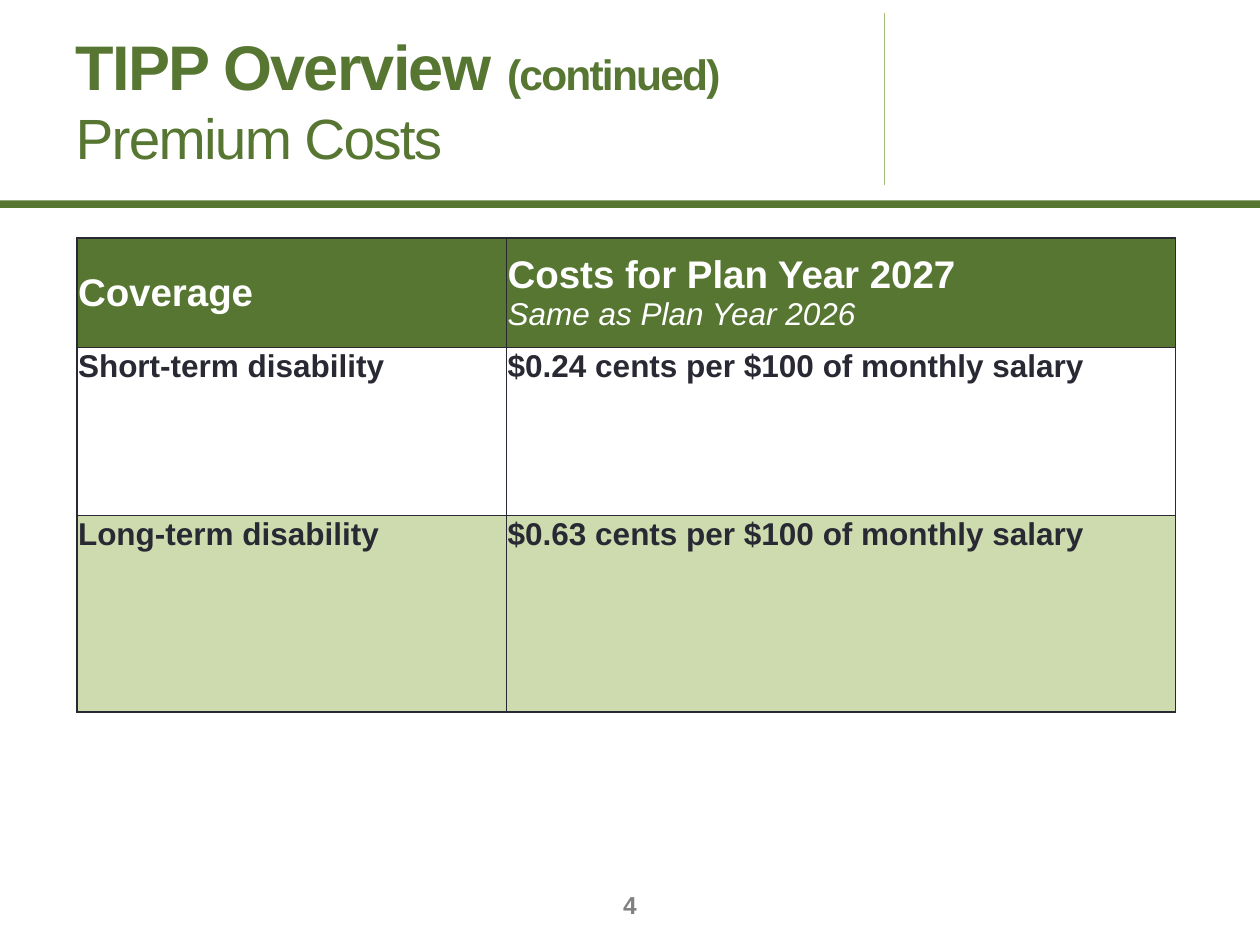
"""Build the TIPP premium costs slide."""
from lxml import etree
from pptx import Presentation
from pptx import util as u
from pptx.dml.color import RGBColor
from pptx.enum import shapes, text
from pptx.oxml import ns

GREEN = RGBColor(0x56, 0x76, 0x32)
SAGE = RGBColor(0xA3, 0xBD, 0x7B)
PALE = RGBColor(0xCE, 0xDB, 0xAF)
INK = RGBColor(0x29, 0x29, 0x34)
GRAY = RGBColor(0x80, 0x80, 0x80)
WHITE = RGBColor(0xFF, 0xFF, 0xFF)

WIDTH, HEIGHT = 10, 7.5
TITLE = [[("TIPP Overview ", 36, True), ("(continued)", 24.3, True)],
         [("Premium Costs", 32.4, False)]]
HEADER = [["Coverage"], ["Costs for Plan Year 2027", "Same as Plan Year 2026"]]
BODY = [[["Short-term disability"], ["$0.24 cents per $100 of monthly salary"]],
        [["Long-term disability"], ["$0.63 cents per $100 of monthly salary"]]]
ROW_FILLS = [GREEN, WHITE, PALE]
COLUMNS = [3.41, 5.31]
ROWS = [0.87, 1.33, 1.56]
PAGE_NUMBER = "4"


def write(para, words, size=18, color=INK, bold=True, italic=False, spacing=None):
    """Add one formatted run to a paragraph."""
    span = para.add_run()
    span.text = words
    font = span.font
    font.name, font.size = "Arial", u.Pt(size)
    font.bold, font.italic = bold, italic
    font.color.rgb = color
    if spacing is not None:
        span._r.get_or_add_rPr().set("spc", str(spacing * 100))


def paragraphs(frame, count):
    """Return the requested number of paragraphs of a text frame."""
    return [frame.paragraphs[0]] + [frame.add_paragraph() for _ in range(count - 1)]


def outline_cell(cell):
    """Draw a thin dark border on all sides of a cell."""
    props = cell._tc.get_or_add_tcPr()
    for index, side in enumerate(("lnL", "lnR", "lnT", "lnB")):
        line = etree.Element(ns.qn(f"a:{side}"), w=str(u.Pt(1)))
        fill = etree.SubElement(line, ns.qn("a:solidFill"))
        etree.SubElement(fill, ns.qn("a:srgbClr"), val=str(INK))
        props.insert(index, line)


def add_rules(page):
    """Draw the header band and the vertical divider."""
    band = page.shapes.add_shape(shapes.MSO_SHAPE.RECTANGLE, 0, u.Inches(1.59),
                                 u.Inches(WIDTH), u.Inches(0.06))
    band.shadow.inherit = False
    band.fill.solid()
    band.fill.fore_color.rgb = GREEN
    band.line.fill.background()
    divider = page.shapes.add_connector(
        shapes.MSO_CONNECTOR.STRAIGHT,
        *(u.Inches(place) for place in (7.02, 0.1, 7.02, 1.47)))
    divider.line.color.rgb = SAGE
    divider.line.width = u.Pt(1)
    etree.SubElement(divider._element.spPr, ns.qn("a:effectLst"))


def add_title(page):
    """Place and fill the title placeholder."""
    box = page.shapes.title
    box.left, box.top, box.width, box.height = (
        u.Inches(length) for length in (0.5, 0.25, 6.27, 1.08))
    frame = box.text_frame
    frame.auto_size = text.MSO_AUTO_SIZE.NONE
    frame.vertical_anchor = text.MSO_ANCHOR.MIDDLE
    for para, spans in zip(paragraphs(frame, len(TITLE)), TITLE):
        para.alignment = text.PP_ALIGN.LEFT
        for words, size, bold in spans:
            write(para, words, size=size, color=GREEN, bold=bold, spacing=-1)


def add_costs(page):
    """Add the premium cost table."""
    table = page.shapes.add_table(
        len(ROWS), len(COLUMNS), u.Inches(0.61), u.Inches(1.89),
        u.Inches(sum(COLUMNS)), u.Inches(sum(ROWS))).table
    for column, width in zip(table.columns, COLUMNS):
        column.width = u.Inches(width)
    for r, (height, entries, fill) in enumerate(zip(ROWS, [HEADER] + BODY, ROW_FILLS)):
        table.rows[r].height = u.Inches(height)
        header = r == 0
        for c, lines in enumerate(entries):
            cell = table.cell(r, c)
            cell.margin_left = cell.margin_right = u.Inches(0.01)
            cell.margin_top = cell.margin_bottom = u.Inches(0.01)
            cell.vertical_anchor = (text.MSO_ANCHOR.MIDDLE if header
                                    else text.MSO_ANCHOR.TOP)
            cell.fill.solid()
            cell.fill.fore_color.rgb = fill
            outline_cell(cell)
            for i, para in enumerate(paragraphs(cell.text_frame, len(lines))):
                write(para, lines[i], size=22 if header and i == 0 else 18,
                      color=WHITE if header else INK, bold=i == 0, italic=i > 0)


def add_page_number(page):
    """Center the page number at the foot."""
    width = 1.17
    box = page.shapes.add_textbox(u.Inches((WIDTH - width) / 2), u.Inches(7),
                                  u.Inches(width), u.Inches(0.36))
    frame = box.text_frame
    frame.word_wrap = True
    frame.vertical_anchor = text.MSO_ANCHOR.MIDDLE
    para = frame.paragraphs[0]
    para.alignment = text.PP_ALIGN.CENTER
    write(para, PAGE_NUMBER, size=14, color=GRAY)


def main():
    """Assemble and save the deck."""
    deck = Presentation()
    deck.slide_width, deck.slide_height = u.Inches(WIDTH), u.Inches(HEIGHT)
    page = deck.slides.add_slide(deck.slide_layouts[5])
    add_rules(page)
    add_title(page)
    add_costs(page)
    add_page_number(page)
    deck.save("out.pptx")


if __name__ == "__main__":
    main()
